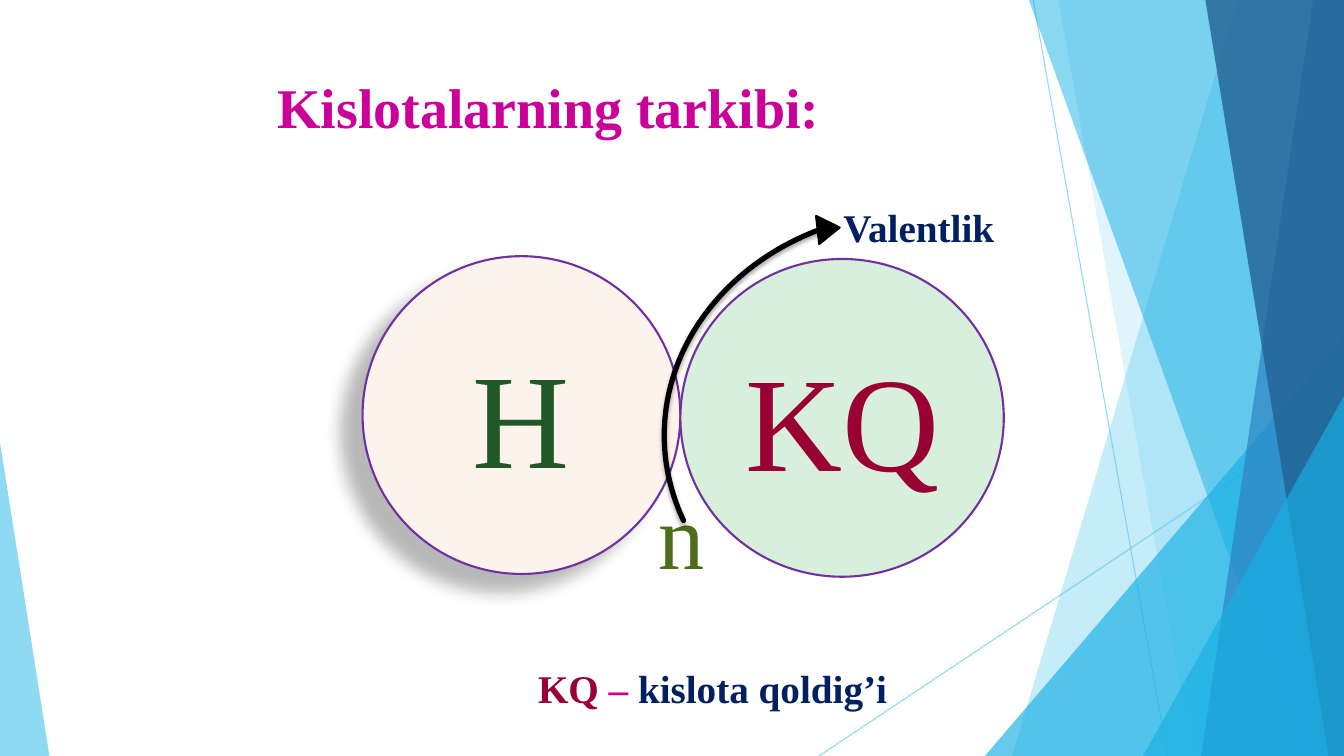
"""Build a slide that explains the composition of acids."""
import dataclasses

import lxml.etree
import pptx
import pptx.dml.color
import pptx.enum.shapes
import pptx.enum.text
import pptx.oxml.ns
import pptx.util

Pt = pptx.util.Pt
SHAPE = pptx.enum.shapes.MSO_SHAPE
ANCHOR = pptx.enum.text.MSO_ANCHOR
ALIGN = pptx.enum.text.PP_ALIGN
WIDTH, HEIGHT = 960, 540


@dataclasses.dataclass(frozen=True)
class Theme:
    font: str = "Times New Roman"
    title_size: int = 40
    symbol_size: int = 96
    index_size: int = 66
    label_size: int = 28
    magenta: str = "CC0099"
    crimson: str = "990033"
    navy: str = "002060"
    green: str = "215828"
    olive: str = "4C6E1B"
    purple: str = "7030A0"
    cream: str = "FDF3ED"
    mint: str = "D8F0DB"
    black: str = "000000"
    sky: str = "5FCBEF"
    cyan: str = "17B0E4"
    blue: str = "2E83C3"
    deep_blue: str = "226292"


def rgb(color):
    return pptx.dml.color.RGBColor.from_string(color)


def add_child(parent, tag, **attributes):
    child = lxml.etree.SubElement(parent, pptx.oxml.ns.qn(tag))
    for name, value in attributes.items():
        child.set(name, str(value))
    return child


def set_alpha(properties, percent):
    solid = next(properties.iter(pptx.oxml.ns.qn("a:srgbClr")))
    add_child(solid, "a:alpha", val=percent * 1000)


def write(paragraph, text, *, font, size, color, bold=False):
    run = paragraph.add_run()
    run.text = text
    run.font.name = font
    run.font.size = Pt(size)
    run.font.bold = bold
    run.font.color.rgb = rgb(color)


class AcidSlide:
    def __init__(self, slide, theme):
        self.slide = slide
        self.shapes = slide.shapes
        self.theme = theme

    def paint(self, shape, fill=None, line=None, weight=1.5, alpha=None):
        shape.shadow.inherit = False
        if fill:
            shape.fill.solid()
            shape.fill.fore_color.rgb = rgb(fill)
        else:
            shape.fill.background()
        if line:
            shape.line.color.rgb = rgb(line)
            shape.line.width = Pt(weight)
        else:
            shape.line.fill.background()
        if alpha:
            set_alpha(shape._element.spPr, alpha)

    def shade(self, shape, alpha, blur, distance, angle):
        effects = shape._element.spPr.find(pptx.oxml.ns.qn("a:effectLst"))
        shadow = add_child(effects, "a:outerShdw", blurRad=Pt(blur), dist=Pt(distance),
                           dir=angle * 60000, algn="ctr", rotWithShape=0)
        color = add_child(shadow, "a:srgbClr", val=self.theme.black)
        add_child(color, "a:alpha", val=alpha * 1000)

    def preset(self, kind, box, adjustments=(), **paint):
        shape = self.shapes.add_shape(kind, *map(Pt, box))
        for index, value in enumerate(adjustments):
            shape.adjustments[index] = value
        self.paint(shape, **paint)
        return shape

    def ray(self, start, end):
        line = self.shapes.add_connector(
            pptx.enum.shapes.MSO_CONNECTOR.STRAIGHT, *map(Pt, start + end))
        line.line.color.rgb = rgb(self.theme.sky)
        line.line.width = Pt(0.75)
        set_alpha(line._element.spPr, 70)
        add_child(line._element.spPr, "a:effectLst")

    def band(self, top_x, bottom_x, color, alpha):
        builder = self.shapes.build_freeform(Pt(top_x), 0)
        corners = [(WIDTH, 0), (WIDTH, HEIGHT), (bottom_x, HEIGHT)]
        builder.add_line_segments([(Pt(x), Pt(y)) for x, y in corners])
        self.paint(builder.convert_to_shape(), fill=color, alpha=alpha)

    def wedge(self, box, apex, color, alpha):
        self.preset(SHAPE.ISOSCELES_TRIANGLE, box, [apex], fill=color, alpha=alpha)

    def title(self, box, text):
        title = self.shapes.title
        self.shapes._spTree.append(title._element)
        title.left, title.top, title.width, title.height = map(Pt, box)
        frame = title.text_frame
        frame.auto_size = pptx.enum.text.MSO_AUTO_SIZE.NONE
        frame.vertical_anchor = ANCHOR.TOP
        paragraph = frame.paragraphs[0]
        paragraph.alignment = ALIGN.CENTER
        write(paragraph, text, font=self.theme.font, size=self.theme.title_size,
              color=self.theme.magenta, bold=True)

    def circle(self, box, symbol, fill, color):
        circle = self.preset(SHAPE.OVAL, box, fill=fill, line=self.theme.purple)
        circle.text_frame.vertical_anchor = ANCHOR.MIDDLE
        paragraph = circle.text_frame.paragraphs[0]
        paragraph.alignment = ALIGN.CENTER
        write(paragraph, symbol, font=self.theme.font,
              size=self.theme.symbol_size, color=color)
        return circle

    def label(self, box, parts, size, bold=True, wrap=False, align=ALIGN.LEFT):
        frame = self.shapes.add_textbox(*map(Pt, box)).text_frame
        frame.word_wrap = wrap
        frame.auto_size = pptx.enum.text.MSO_AUTO_SIZE.SHAPE_TO_FIT_TEXT
        paragraph = frame.paragraphs[0]
        paragraph.alignment = align
        for text, color in parts:
            write(paragraph, text, font=self.theme.font, size=size, color=color, bold=bold)

    def valence_curve(self, box):
        curve = self.preset(SHAPE.ARC, box, [175.91, 11.86],
                            line=self.theme.black, weight=3.75)
        curve._element.spPr.find(pptx.oxml.ns.qn("a:xfrm")).set("flipH", "1")
        curve._element.spPr.find(pptx.oxml.ns.qn("a:ln")).set("cap", "rnd")
        self.shade(curve, alpha=35, blur=3, distance=2, angle=90)

    def valence_tip(self, box):
        tip = self.preset(SHAPE.ISOSCELES_TRIANGLE, box,
                          fill=self.theme.black, line=self.theme.black)
        tip.rotation = 83.6


def draw_backdrop(page):
    theme = page.theme
    page.ray((738, 0), (834, HEIGHT))
    page.ray((WIDTH, 290), (585, HEIGHT))
    page.band(884, 723, theme.sky, 36)
    page.band(756, 852, theme.sky, 20)
    page.wedge((703.5, 240, 256.5, 300), 1, theme.cyan, 66)
    page.band(735, 929.5, theme.cyan, 50)
    page.band(938, 858, theme.blue, 70)
    page.band(861, 949, theme.deep_blue, 80)
    page.wedge((816.5, 283, 143.5, 257), 1, theme.cyan, 66)
    page.wedge((0, 316, 35.3, 224), 0, theme.sky, 70)


def main():
    deck = pptx.Presentation()
    deck.slide_width, deck.slide_height = Pt(WIDTH), Pt(HEIGHT)
    theme = Theme()
    page = AcidSlide(deck.slides.add_slide(deck.slide_layouts[5]), theme)
    draw_backdrop(page)
    page.title((53.3, 48.2, 677, 104), "Kislotalarning tarkibi:")
    hydrogen = page.circle((259, 183, 227, 227), "H", theme.cream, theme.green)
    page.shade(hydrogen, alpha=28, blur=11.8, distance=19.7, angle=141)
    page.circle((486, 185, 231, 227), "KQ", theme.mint, theme.crimson)
    page.label((463, 337, 46, 87), [("n", theme.olive)], theme.index_size,
               bold=False, wrap=True)
    page.valence_curve((474.5, 151.2, 365.8, 319.7))
    page.label((595.4, 142, 124, 41), [("Valentlik", theme.navy)], theme.label_size)
    page.valence_tip((581.8, 155.5, 20.2, 15.8))
    residue = [("KQ", theme.crimson), (" – ", theme.magenta),
               ("kislota qoldig’i", theme.navy)]
    page.label((376, 471, 266, 41), residue, theme.label_size, align=ALIGN.CENTER)
    deck.save("out.pptx")


if __name__ == "__main__":
    main()
